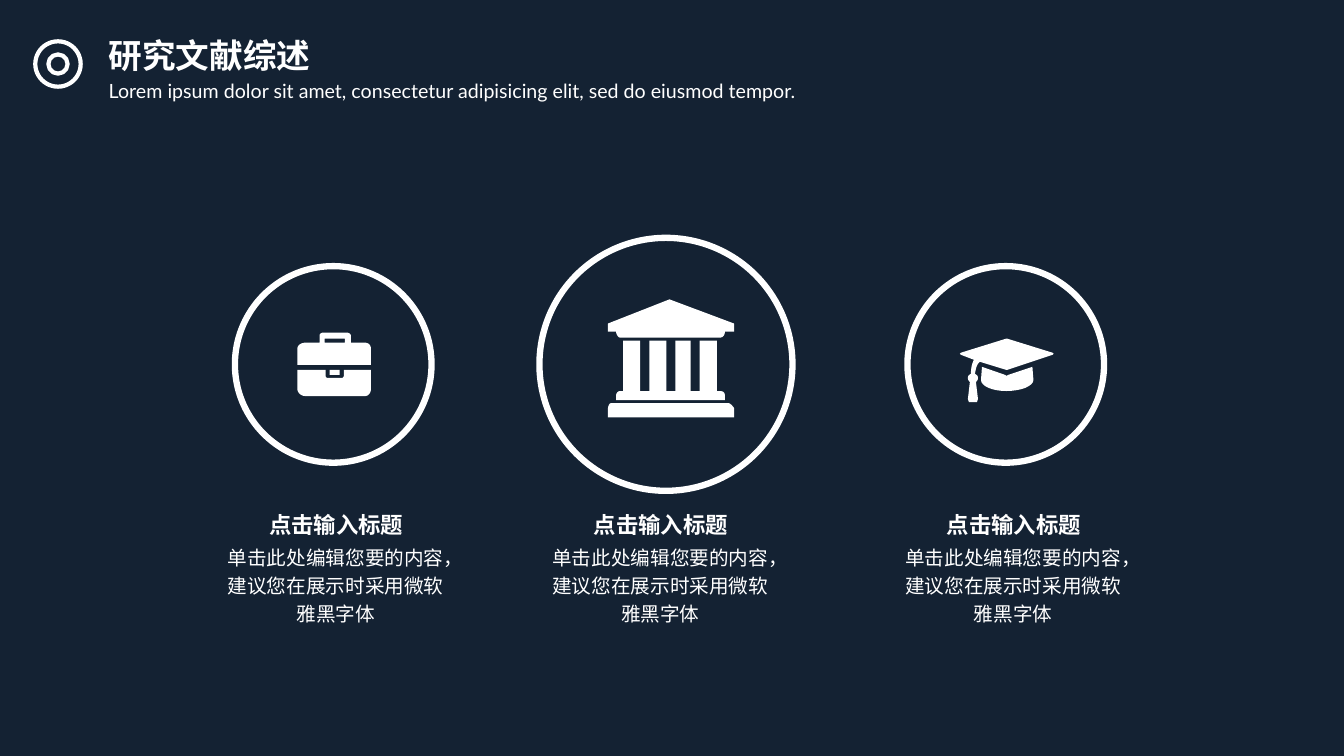
"""Build a literature review slide with three icon columns."""
from dataclasses import dataclass

from pptx import Presentation
from pptx.dml.color import RGBColor
from pptx.enum.shapes import MSO_SHAPE as Preset
from pptx.enum.text import MSO_AUTO_SIZE as AutoSize, PP_ALIGN as Align
from pptx.util import Inches, Pt


@dataclass(frozen=True)
class Theme:
    background: RGBColor = RGBColor(0x14, 0x22, 0x33)
    ink: RGBColor = RGBColor(0xFF, 0xFF, 0xFF)
    font: str = "Lato"
    title: int = 24
    heading: int = 16
    body: int = 14
    ring: float = 4.5
    small_ring: int = 3


THEME = Theme()

COLUMN_EDGES = [(618, 635), (644, 661), (670, 685), (694, 711)]
COLUMN_OUTLINE = [
    point
    for left, right in COLUMN_EDGES
    for point in ((left, 388), (left, 338), (right, 338), (right, 388))
]

# Icon outlines are in hundredths of an inch; six numbers describe a Bezier curve.
TEMPLE = [
    [(728, 321), (728, 329), (719, 329), (719, 331, 718, 335, 714, 335), (615, 335),
     (613, 335, 611, 331, 611, 329), (603, 329), (603, 321), (664, 297)],
    [(728, 405), (728, 414), (603, 414), (603, 405), (603, 404, 604, 400, 606, 400),
     (723, 400), (724, 400, 728, 404, 728, 405)],
    [*COLUMN_OUTLINE, (714, 388), (718, 388, 719, 390, 719, 393), (719, 397),
     (611, 397), (611, 393), (611, 390, 613, 388, 615, 388)],
]
BRIEFCASE = [
    [(368, 362), (295, 362), (295, 346), (295, 343, 298, 340, 303, 340), (317, 340),
     (317, 333), (317, 331, 319, 330, 321, 330), (343, 330),
     (346, 330, 348, 331, 348, 333), (348, 340), (362, 340),
     (366, 340, 368, 343, 368, 346)],
    [(368, 386), (368, 389, 366, 393, 362, 393), (303, 393),
     (298, 393, 295, 389, 295, 386), (295, 367), (323, 367), (323, 373),
     (323, 374, 324, 375, 325, 375), (339, 375), (340, 375, 341, 374, 341, 373),
     (341, 367), (368, 367)],
    [(342, 340), (342, 336), (322, 336), (322, 340)],
    [(337, 372), (327, 372), (327, 367), (337, 367)],
]
GRADUATION_CAP = [
    [(1044, 352), (999, 367), (998, 367), (972, 359), (969, 361, 968, 365, 967, 371),
     (969, 372, 970, 373, 970, 375), (970, 377, 969, 378, 968, 379), (970, 396),
     (969, 399), (961, 399), (960, 396), (962, 379), (961, 378, 960, 377, 960, 375),
     (960, 373, 961, 372, 963, 371), (963, 365, 964, 361, 966, 357), (953, 352),
     (952, 351), (953, 350), (998, 336), (999, 336), (1044, 350), (1045, 351)],
    [(1025, 377), (1025, 383, 1013, 388, 998, 388), (984, 388, 973, 383, 973, 377),
     (974, 364), (997, 372), (998, 373), (1000, 372), (1024, 364)],
]


def set_attributes(target, values):
    """Assign each named value to the target."""
    for name, value in values.items():
        setattr(target, name, value)


def trace(contour, steps=8):
    """Turn lines and Bezier curves into points in EMU."""
    points = []
    for segment in contour:
        if len(segment) == 2:
            points.append(segment)
            continue
        corners = [points[-1], segment[:2], segment[2:4], segment[4:]]
        for step in range(1, steps + 1):
            t = step / steps
            weights = ((1 - t) ** 3, 3 * t * (1 - t) ** 2, 3 * t * t * (1 - t), t ** 3)
            points.append(tuple(
                sum(weight * corner[axis] for weight, corner in zip(weights, corners))
                for axis in (0, 1)
            ))
    return [(Inches(x / 100), Inches(y / 100)) for x, y in points]


def add_icon(group, contours):
    """Draw a solid icon from closed contours."""
    outlines = [trace(contour) for contour in contours]
    builder = group.shapes.build_freeform(*outlines[0][0])
    for index, outline in enumerate(outlines):
        if index:
            builder.move_to(*outline[0])
        builder.add_line_segments(outline[1:], close=True)
    icon = builder.convert_to_shape()
    icon.shadow.inherit = False
    icon.fill.solid()
    icon.fill.fore_color.rgb = THEME.ink
    icon.line.fill.background()


def add_ring(group, left, top, diameter, weight):
    """Draw an unfilled circle."""
    ring = group.shapes.add_shape(
        Preset.OVAL, Inches(left), Inches(top), Inches(diameter), Inches(diameter))
    ring.shadow.inherit = False
    ring.fill.background()
    ring.line.color.rgb = THEME.ink
    ring.line.width = Pt(weight)


def add_text(page, place, text, size, bold=False, wrap=True, **layout):
    """Add a one-paragraph text box."""
    box = page.shapes.add_textbox(*map(Inches, place))
    fit = AutoSize.SHAPE_TO_FIT_TEXT if wrap else AutoSize.NONE
    set_attributes(box.text_frame, {"word_wrap": wrap, "auto_size": fit})
    para = box.text_frame.paragraphs[0]
    set_attributes(para, {"line_spacing": 1.2, **layout})
    span = para.add_run()
    span.text = text
    set_attributes(span.font, {"name": THEME.font, "size": Pt(size), "bold": bold})
    span.font.color.rgb = THEME.ink


def add_caption(page, left):
    """Add a column heading with its description."""
    add_text(page, (left + 0.25, 4.97, 2.01, 0.37), "点击输入标题",
             THEME.heading, bold=True, wrap=False, alignment=Align.CENTER)
    add_text(page, (left, 5.32, 2.5, 0.92),
             "单击此处编辑您要的内容，建议您在展示时采用微软雅黑字体",
             THEME.body, alignment=Align.CENTER)


def main():
    """Build and save the deck."""
    deck = Presentation()
    set_attributes(deck, {"slide_width": Inches(13.33), "slide_height": Inches(7.5)})
    page = deck.slides.add_slide(deck.slide_layouts[6])
    page.background.fill.solid()
    page.background.fill.fore_color.rgb = THEME.background

    emblems = page.shapes.add_group_shape()
    for left, top, diameter in ((5.35, 2.36, 2.51), (2.33, 2.64, 1.95), (9, 2.64, 1.95)):
        add_ring(emblems, left, top, diameter, THEME.ring)
    for contours in (TEMPLE, BRIEFCASE, GRADUATION_CAP):
        add_icon(emblems, contours)
    for left in (2.08, 5.3, 8.8):
        add_caption(page, left)

    add_text(page, (0.98, 0.69, 7.85, 0.36),
             "Lorem ipsum dolor sit amet, consectetur adipisicing elit, "
             "sed do eiusmod tempor.", THEME.body, space_before=Pt(10))
    add_text(page, (0.98, 0.22, 2.9, 0.54), "研究文献综述", THEME.title, bold=True)
    target = page.shapes.add_group_shape()
    for left, top, diameter in ((0.35, 0.41, 0.45), (0.48, 0.54, 0.19)):
        add_ring(target, left, top, diameter, THEME.small_ring)
    deck.save("out.pptx")


if __name__ == "__main__":
    main()
